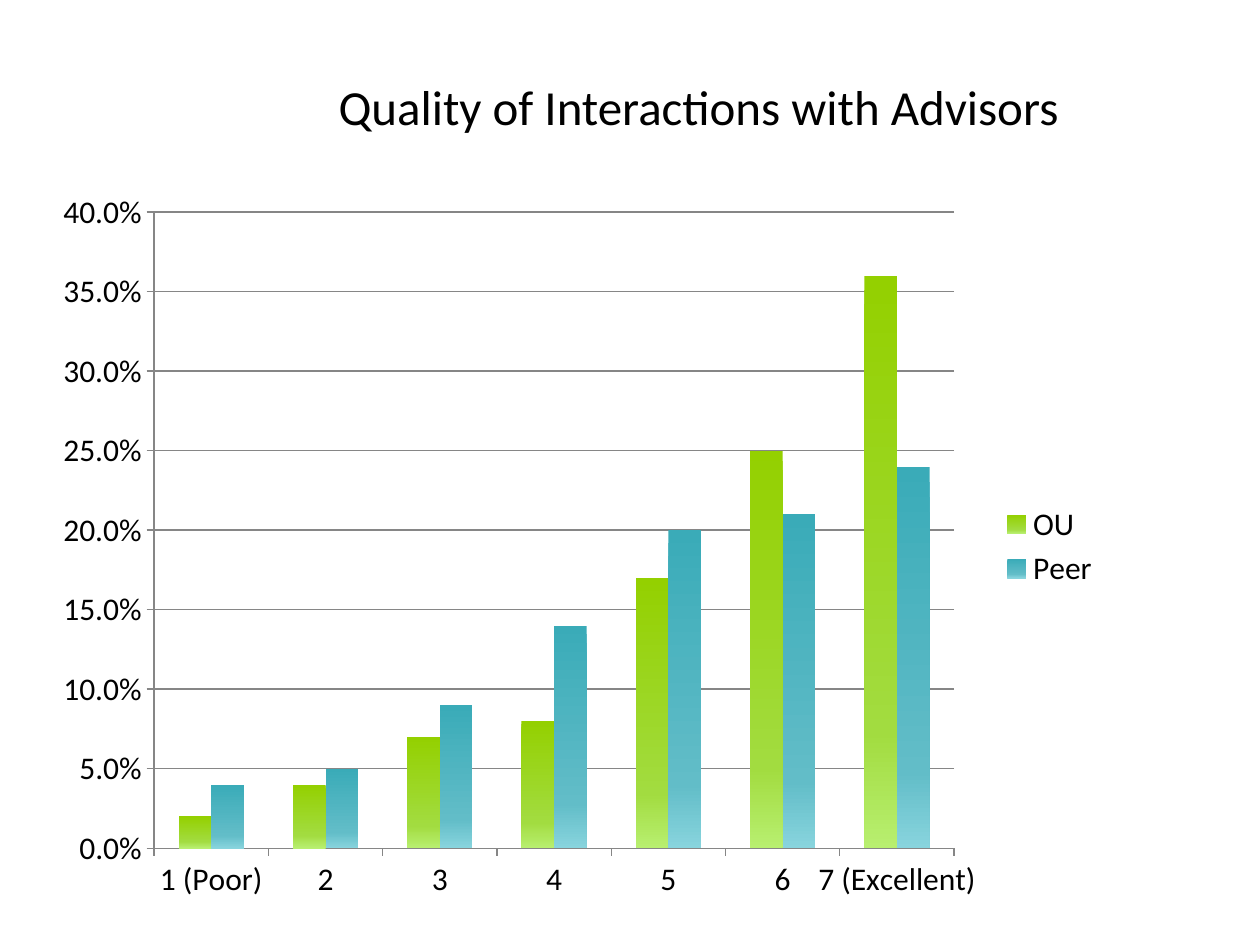
"""Build a slide comparing advisor interaction ratings in a column chart."""
import copy
from dataclasses import dataclass

import lxml.etree
import pptx
import pptx.chart.data
import pptx.dml.color
import pptx.enum.chart
import pptx.enum.text
import pptx.oxml.ns
import pptx.util
from pptx.util import Cm


@dataclass(frozen=True)
class Theme:
    font: str = "Calibri"
    text: str = "000000"
    line: str = "868686"
    title_size: int = 28
    chart_size: int = 18
    green: tuple = ("94D000", "A2DC40", "B8EF70")
    teal: tuple = ("3AABB8", "62BDC8", "88D4DD")


THEME = Theme()
CATEGORIES = ("1 (Poor)", "2", "3", "4", "5", "6", "7 (Excellent)")
SERIES = (
    ("OU", (0.02, 0.04, 0.07, 0.08, 0.17, 0.25, 0.36), THEME.green),
    ("Peer", (0.04, 0.05, 0.09, 0.14, 0.2, 0.21, 0.24), THEME.teal),
)
STOP_POSITIONS = (0, 0.8, 1)
PLOT_AREA = {"x": 0.105, "y": 0.045, "w": 0.747, "h": 0.866}


def rgb(value):
    return pptx.dml.color.RGBColor.from_string(value)


def format_font(font, size):
    font.name = THEME.font
    font.size = pptx.util.Pt(size)
    font.color.rgb = rgb(THEME.text)


def format_line(line):
    line.color.rgb = rgb(THEME.line)
    line.width = pptx.util.Pt(0.75)


def add_title(slide, text):
    title = slide.shapes.title
    title.left, title.top = Cm(1.47), Cm(1.27)
    title.width, title.height = Cm(20.12), Cm(1.73)
    frame = title.text_frame
    frame.word_wrap = True
    frame.vertical_anchor = pptx.enum.text.MSO_ANCHOR.MIDDLE
    paragraph = frame.paragraphs[0]
    paragraph.alignment = pptx.enum.text.PP_ALIGN.RIGHT
    run = paragraph.add_run()
    run.text = text
    format_font(run.font, THEME.title_size)


def fill_gradient(chart, series, index, colors):
    """Shade a series from top to bottom through three colours."""
    fill = series.format.fill
    fill.gradient()
    fill.gradient_angle = 270
    stops = chart.element.xpath(f".//c:ser[{index + 1}]/c:spPr/a:gradFill/a:gsLst")[0]
    stops.insert(1, copy.deepcopy(stops[0]))
    for stop, position, color in zip(fill.gradient_stops, STOP_POSITIONS, colors):
        stop.position = position
        stop.color.rgb = rgb(color)


def place_plot_area(chart):
    """Fix the inner plot area as fractions of the chart."""
    qn = pptx.oxml.ns.qn
    plot_area = chart.element.xpath(".//c:plotArea")[0]
    for old in plot_area.findall(qn("c:layout")):
        plot_area.remove(old)
    layout = lxml.etree.Element(qn("c:layout"))
    plot_area.insert(0, layout)
    manual = lxml.etree.SubElement(layout, qn("c:manualLayout"))
    settings = {"layoutTarget": "inner", "xMode": "edge", "yMode": "edge", **PLOT_AREA}
    for name, value in settings.items():
        lxml.etree.SubElement(manual, qn(f"c:{name}")).set("val", str(value))


def format_axes(chart):
    for axis in (chart.category_axis, chart.value_axis):
        axis.major_tick_mark = pptx.enum.chart.XL_TICK_MARK.OUTSIDE
        axis.minor_tick_mark = pptx.enum.chart.XL_TICK_MARK.NONE
        format_line(axis.format.line)
        format_font(axis.tick_labels.font, THEME.chart_size)
    chart.category_axis.has_major_gridlines = False
    value_axis = chart.value_axis
    value_axis.minimum_scale, value_axis.maximum_scale = 0, 0.4
    value_axis.major_unit = 0.05
    value_axis.has_major_gridlines = True
    format_line(value_axis.major_gridlines.format.line)
    value_axis.tick_labels.number_format = "0.0%"
    value_axis.tick_labels.number_format_is_linked = False


def add_rating_chart(slide):
    data = pptx.chart.data.CategoryChartData(number_format="0%")
    data.categories = CATEGORIES
    for name, values, _ in SERIES:
        data.add_series(name, values)
    chart = slide.shapes.add_chart(
        pptx.enum.chart.XL_CHART_TYPE.COLUMN_CLUSTERED,
        Cm(0.84), Cm(3.61), Cm(21.59), Cm(14.81), data,
    ).chart
    chart.has_title = False
    format_font(chart.font, THEME.chart_size)
    chart.has_legend = True
    chart.legend.position = pptx.enum.chart.XL_LEGEND_POSITION.RIGHT
    chart.legend.include_in_layout = False
    format_font(chart.legend.font, THEME.chart_size)
    plot = chart.plots[0]
    plot.gap_width, plot.overlap = 150, 0
    plot.vary_by_categories = False
    for index, (series, (_, _, colors)) in enumerate(zip(plot.series, SERIES)):
        fill_gradient(chart, series, index, colors)
    format_axes(chart)
    place_plot_area(chart)


def main():
    presentation = pptx.Presentation()
    presentation.slide_width, presentation.slide_height = Cm(25.4), Cm(19.05)
    slide = presentation.slides.add_slide(presentation.slide_layouts[5])
    add_title(slide, "Quality of Interactions with Advisors")
    add_rating_chart(slide)
    presentation.save("out.pptx")


if __name__ == "__main__":
    main()
